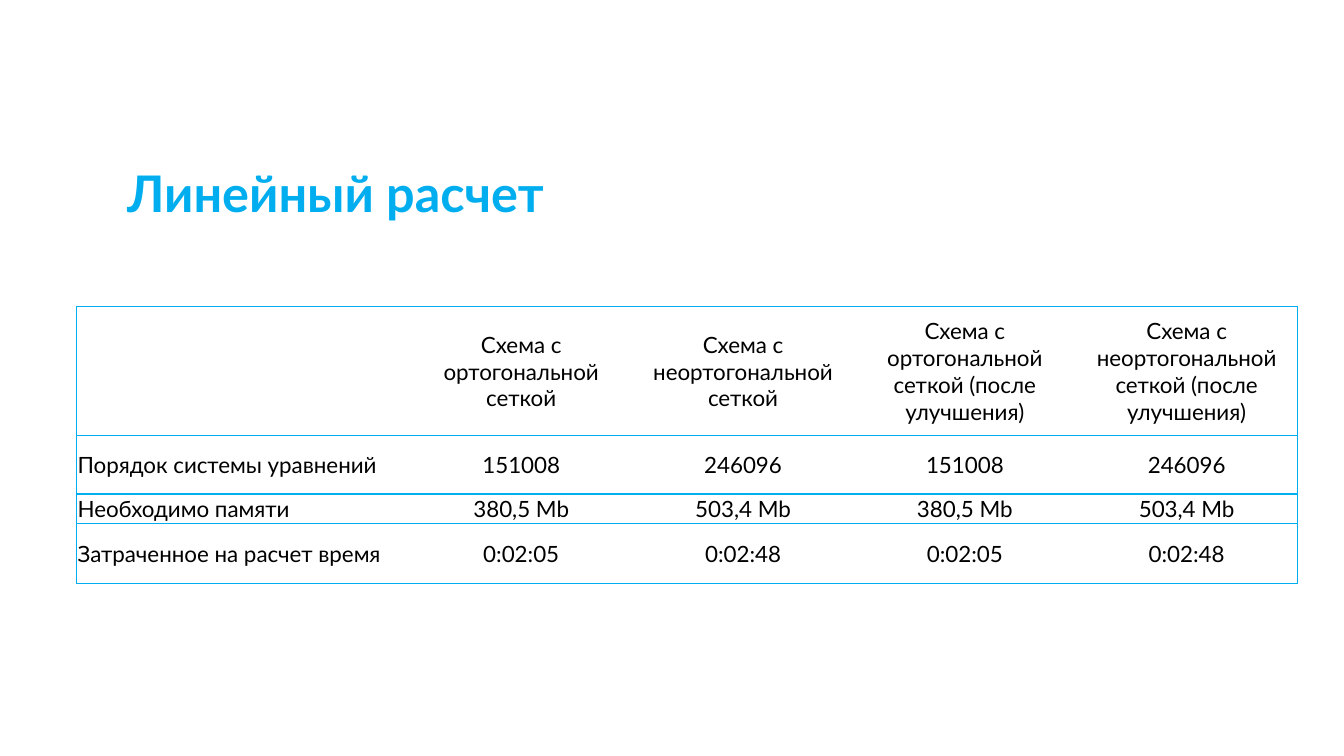
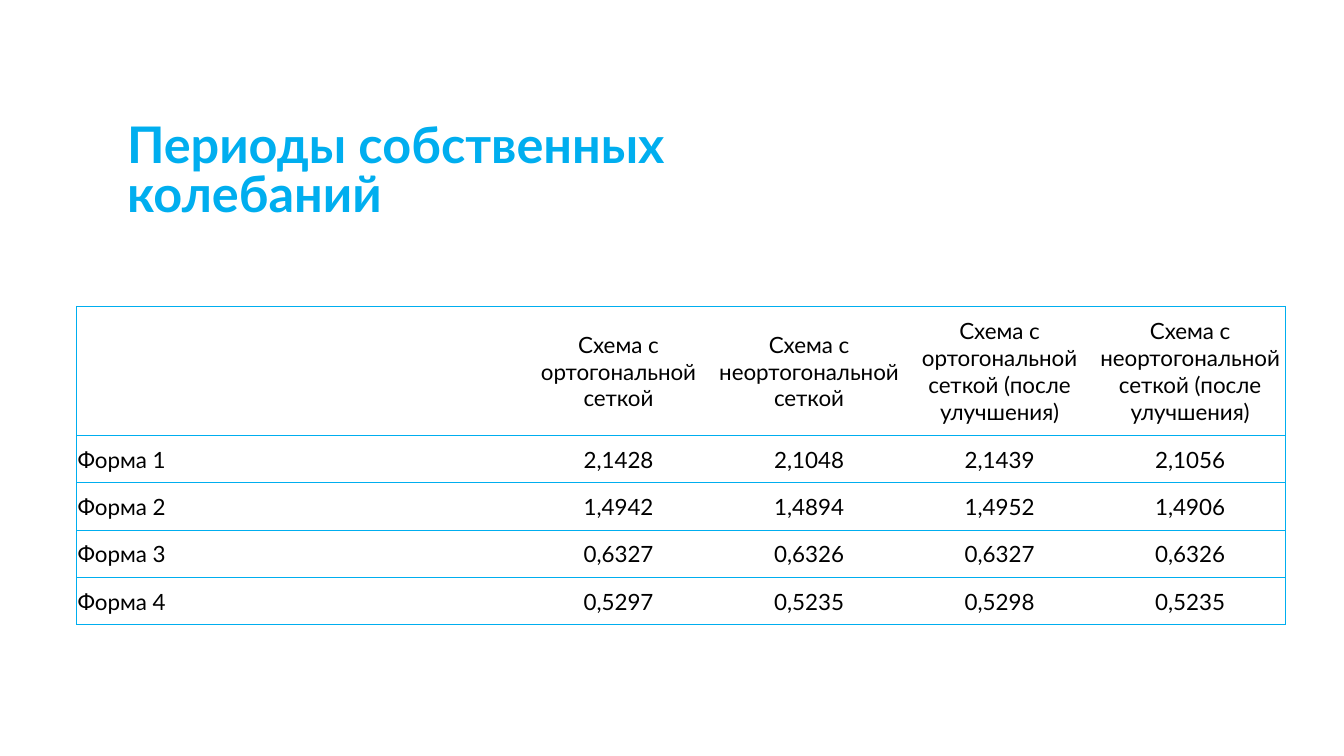
import dataclasses

import pptx
import pptx.dml.color
import pptx.enum.text
import pptx.oxml.ns
import pptx.util
from lxml import etree

Inches = pptx.util.Inches
Align = pptx.enum.text.PP_ALIGN
Anchor = pptx.enum.text.MSO_ANCHOR


@dataclasses.dataclass(frozen=True)
class Theme:
    accent: str = "00AEEF"
    ink: str = "000000"
    paper: str = "FFFFFF"
    font: str = "Lato"
    title_size: int = 36
    table_size: int = 16
    border_width: int = 1


def rgb(value):
    return pptx.dml.color.RGBColor.from_string(value)


def write(frame, text, *, font, size, color, bold=False, align=Align.LEFT, spacing=None):
    frame.word_wrap = True
    paragraph = frame.paragraphs[0]
    paragraph.alignment = align
    if spacing:
        paragraph.line_spacing = spacing
    run = paragraph.add_run()
    run.text = text
    run.font.name = font
    run.font.size = pptx.util.Pt(size)
    run.font.bold = bold
    run.font.color.rgb = rgb(color)


class Deck:
    """Holds the theme and the current slide, and adds styled elements to it."""

    def __init__(self, theme):
        self.theme = theme
        self.presentation = pptx.Presentation()
        self.presentation.slide_width = Inches(13.33)
        self.presentation.slide_height = Inches(7.5)
        self.slide = None

    def add_slide(self):
        title_only = self.presentation.slide_layouts[5]
        self.slide = self.presentation.slides.add_slide(title_only)
        background = self.slide.background.fill
        background.solid()
        background.fore_color.rgb = rgb(self.theme.paper)

    def title(self, text, width):
        heading = self.slide.shapes.title
        heading.left, heading.top = Inches(1.16), Inches(0.58)
        heading.width, heading.height = Inches(width), Inches(1.67)
        frame = heading.text_frame
        frame.auto_size = pptx.enum.text.MSO_AUTO_SIZE.NONE
        frame.vertical_anchor = Anchor.BOTTOM
        write(frame, text, font=self.theme.font, size=self.theme.title_size,
              color=self.theme.accent, bold=True, spacing=0.8)

    def borders(self, cell, drawn):
        properties = cell._tc.get_or_add_tcPr()
        qn = pptx.oxml.ns.qn
        for side in "LRTB":
            line = etree.SubElement(properties, qn(f"a:ln{side}"))
            if side in drawn:
                line.set("w", str(pptx.util.Pt(self.theme.border_width)))
                fill = etree.SubElement(line, qn("a:solidFill"))
                etree.SubElement(fill, qn("a:srgbClr"), val=self.theme.accent)
            else:
                line.set("w", "0")
                etree.SubElement(line, qn("a:noFill"))

    def cell(self, cell, text, align, drawn):
        self.borders(cell, drawn)
        cell.fill.solid()
        cell.fill.fore_color.rgb = rgb(self.theme.paper)
        cell.vertical_anchor = Anchor.MIDDLE
        cell.margin_left = cell.margin_top = cell.margin_right = Inches(0.01)
        cell.margin_bottom = 0
        if text:
            write(cell.text_frame, text, font=self.theme.font,
                  size=self.theme.table_size, color=self.theme.ink, align=align)

    def table(self, rows, label_width, value_width, heights):
        last = len(rows[0]) - 1
        widths = [label_width] + [value_width] * last
        grid = self.slide.shapes.add_table(
            len(rows), len(widths), Inches(0.76), Inches(3.04),
            Inches(sum(widths)), Inches(sum(heights))).table
        grid.first_row = grid.horz_banding = False
        for column, width in zip(grid.columns, widths):
            column.width = Inches(width)
        for row, height, texts in zip(grid.rows, heights, rows):
            row.height = Inches(height)
            for index, (cell, text) in enumerate(zip(row.cells, texts)):
                align = Align.CENTER if index else Align.LEFT
                drawn = "TB" + {0: "L", last: "R"}.get(index, "")
                self.cell(cell, text, align, drawn)


SCHEMES = ["", "Схема с ортогональной сеткой", "Схема с неортогональной сеткой",
           "Схема с ортогональной сеткой (после улучшения)",
           "Схема с неортогональной сеткой (после улучшения)"]
HEADER_HEIGHT = 1.28


def main():
    deck = Deck(Theme())

    deck.add_slide()
    deck.title("Линейный расчет", width=4.5)
    deck.table([
        SCHEMES,
        ["Порядок системы уравнений", "151008", "246096", "151008", "246096"],
        ["Необходимо памяти", "380,5 Mb", "503,4 Mb", "380,5 Mb", "503,4 Mb"],
        ["Затраченное на расчет время", "0:02:05", "0:02:48", "0:02:05", "0:02:48"],
    ], label_width=3.31, value_width=2.2, heights=[HEADER_HEIGHT, 0.58, 0.29, 0.6])

    deck.add_slide()
    deck.title("Периоды собственных колебаний", width=8.1)
    deck.table([
        SCHEMES,
        ["Форма 1", "2,1428", "2,1048", "2,1439", "2,1056"],
        ["Форма 2", "1,4942", "1,4894", "1,4952", "1,4906"],
        ["Форма 3", "0,6327", "0,6326", "0,6327", "0,6326"],
        ["Форма 4", "0,5297", "0,5235", "0,5298", "0,5235"],
    ], label_width=4.43, value_width=1.89, heights=[HEADER_HEIGHT] + [0.47] * 4)

    deck.presentation.save("out.pptx")


if __name__ == "__main__":
    main()
